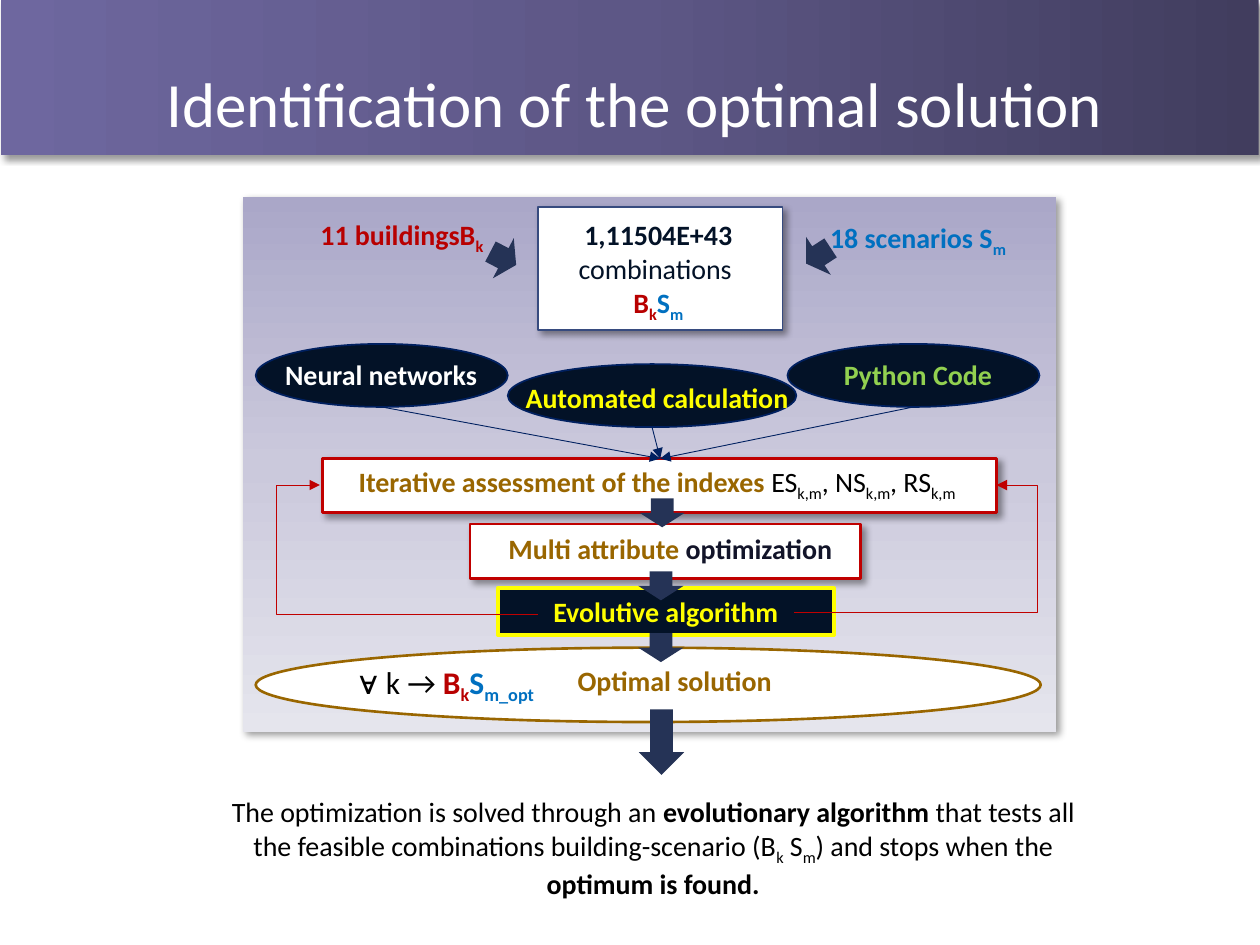
from typing import NamedTuple, Optional

from lxml import etree
from pptx import Presentation
from pptx import util as u
from pptx.dml.color import RGBColor
from pptx.enum import shapes, text
from pptx.oxml.ns import qn

WHITE = RGBColor(0xFF, 0xFF, 0xFF)
BLACK = RGBColor(0x00, 0x00, 0x00)
NIGHT = RGBColor(0x03, 0x12, 0x27)
INK = RGBColor(0x12, 0x14, 0x29)
ARROW = RGBColor(0x25, 0x33, 0x56)
NAVY = RGBColor(0x00, 0x20, 0x60)
STEEL = RGBColor(0x37, 0x4B, 0x7F)
BLUE = RGBColor(0x00, 0x70, 0xC0)
RED = RGBColor(0xB8, 0x00, 0x00)
CRIMSON = RGBColor(0xC0, 0x00, 0x00)
OCHRE = RGBColor(0x99, 0x66, 0x00)
YELLOW = RGBColor(0xFF, 0xFF, 0x00)
GREEN = RGBColor(0x92, 0xD0, 0x50)
BAND = [RGBColor(0x41, 0x3D, 0x5E), RGBColor(0x5D, 0x57, 0x86), RGBColor(0x6E, 0x67, 0x9F)]
PANEL = [RGBColor(0xAA, 0xA7, 0xC8), RGBColor(0xCB, 0xC9, 0xDC), RGBColor(0xE5, 0xE5, 0xED)]

COLUMNS, ROWS = 100, 75
Kind = shapes.MSO_SHAPE


class Span(NamedTuple):
    words: str
    color: RGBColor = BLACK
    bold: bool = False
    sub: bool = False
    font: Optional[str] = None


def child(parent, tag, **attributes):
    node = etree.SubElement(parent, qn(tag))
    for name, value in attributes.items():
        node.set(name, str(value))
    return node


def add_shadow(properties):
    effects = etree.Element(qn("a:effectLst"))
    shadow = child(effects, "a:outerShdw", blurRad=u.Pt(4), dist=u.Pt(3),
                   dir=45 * 60000, algn="tl", rotWithShape=0)
    child(child(shadow, "a:srgbClr", val=BLACK), "a:alpha", val=40000)
    before = properties.find(qn("a:latin"))
    if before is None:
        properties.append(effects)
    else:
        before.addprevious(effects)


class Diagram:
    """Draws on one slide; places are (column, row, columns, rows) of the grid."""

    font = "Calibri"
    size = 16

    def __init__(self, deck):
        self.column = deck.slide_width / COLUMNS
        self.row = deck.slide_height / ROWS
        self.page = deck.slides.add_slide(deck.slide_layouts[5])

    def emu(self, place):
        steps = (self.column, self.row) * (len(place) // 2)
        return [round(value * step) for value, step in zip(place, steps)]

    def add_spans(self, para, spans, size=None):
        for span in spans:
            run = para.add_run()
            run.text = span.words
            run.font.name = span.font or self.font
            run.font.size = u.Pt(size or self.size)
            run.font.bold = span.bold
            run.font.color.rgb = span.color
            if span.sub:
                run.font._element.set("baseline", "-25000")

    def title(self, place, words):
        box = self.page.shapes.title
        box.left, box.top, box.width, box.height = self.emu(place)
        frame = box.text_frame
        frame.auto_size = text.MSO_AUTO_SIZE.NONE
        frame.vertical_anchor = text.MSO_ANCHOR.BOTTOM
        para = frame.paragraphs[0]
        para.alignment = text.PP_ALIGN.LEFT
        para.line_spacing = 0.9
        self.add_spans(para, [Span(words, WHITE)], 36)
        add_shadow(para.runs[0].font._element)

    def shape(self, kind, place, fill=WHITE, line=None, weight=1, shadow=False, turn=0):
        shape = self.page.shapes.add_shape(kind, *self.emu(place))
        shape.rotation = turn
        shape.fill.solid()
        shape.fill.fore_color.rgb = fill
        if line is None:
            shape.line.fill.background()
        else:
            shape.line.color.rgb = line
            shape.line.width = u.Pt(weight)
        if shadow:
            add_shadow(shape._element.spPr)
        else:
            shape.shadow.inherit = False
        return shape

    def gradient(self, place, colors, angle):
        """Adds a shadowed rectangle shaded through evenly spaced colours."""
        shape = self.shape(Kind.RECTANGLE, place, shadow=True)
        solid = shape._element.spPr.find(qn("a:solidFill"))
        grad = etree.Element(qn("a:gradFill"), rotWithShape="1")
        stops = child(grad, "a:gsLst")
        for index, color in enumerate(colors):
            stop = child(stops, "a:gs", pos=index * 100000 // (len(colors) - 1))
            child(stop, "a:srgbClr", val=color)
        child(grad, "a:lin", ang=angle * 60000, scaled=0)
        solid.getparent().replace(solid, grad)
        return shape

    def send_to_back(self, shape):
        self.page.shapes._spTree.insert(2, shape._element)

    def label(self, place, *paragraphs, size=None, wrap=True):
        box = self.page.shapes.add_textbox(*self.emu(place))
        self.fill_text(box.text_frame, paragraphs, size, wrap)

    def fill_text(self, frame, paragraphs, size=None, wrap=True):
        frame.word_wrap = wrap
        for index, spans in enumerate(paragraphs):
            para = frame.add_paragraph() if index else frame.paragraphs[0]
            para.alignment = text.PP_ALIGN.CENTER
            self.add_spans(para, spans, size)

    def arrow(self, place, turn=90):
        self.shape(Kind.RIGHT_ARROW, place, ARROW, turn=turn)

    def connector(self, start, end, color, bend=None):
        """Adds a thin arrow; bend is the elbow's share of the horizontal run."""
        kind = shapes.MSO_CONNECTOR.ELBOW if bend else shapes.MSO_CONNECTOR.STRAIGHT
        line = self.page.shapes.add_connector(kind, *self.emu(start + end))
        line.line.color.rgb = color
        line.line.width = u.Pt(0.5)
        properties = line._element.spPr
        child(properties.find(qn("a:ln")), "a:tailEnd", type="triangle")
        child(properties, "a:effectLst")
        if bend:
            guides = properties.find(qn("a:prstGeom")).find(qn("a:avLst"))
            child(guides, "a:gd", name="adj1", fmla=f"val {round(bend * 100000)}")


def bold(words, color):
    return Span(words, color, True)


def indexed(letter, index, color=BLACK, heavy=False):
    return [Span(letter, color, heavy), Span(index, color, heavy, True)]


def main():
    deck = Presentation()
    deck.slide_width, deck.slide_height = u.Inches(10), u.Inches(7.5)
    draw = Diagram(deck)

    draw.send_to_back(draw.gradient((0.1, 0, 99.8, 12.3), BAND, 180))
    draw.title((12.2, 4.3, 83.5, 7.4), "Identification of the optimal solution")
    draw.label((16.3, 62.6, 71.1, 9.1), [
        Span("The optimization is solved through an "),
        bold("evolutionary algorithm", BLACK),
        Span(" that tests all the feasible combinations building-scenario ("),
        *indexed("B", "k"), *indexed(" S", "m"),
        Span(") and stops when the "), bold("optimum is found.", BLACK)])

    draw.gradient((19.3, 15.6, 64.5, 42.5), PANEL, 90)
    draw.shape(Kind.RECTANGLE, (42.7, 16.4, 19.4, 9.8), line=STEEL, shadow=True)
    for place in ((25.6, 36.4, 53.5, 4.3), (37.3, 41.6, 31, 4.3)):
        draw.shape(Kind.RECTANGLE, place, line=CRIMSON, weight=1.5, shadow=True)
    draw.shape(Kind.OVAL, (20.3, 51.4, 62.3, 5.9), line=OCHRE, weight=1.5)

    draw.label((37.1, 41.7, 32.2, 3.7),
               [bold("Multi attribute ", OCHRE), bold("optimization", INK)])
    draw.arrow((51.4, 38.9, 2.3, 3.6))
    draw.label((41.3, 16.8, 21.9, 11.8),
               [bold("1,11504E+43 ", NIGHT), Span("combinations ", NIGHT)],
               indexed("B", "k", RED, True) + indexed("S", "m", BLUE, True))
    evolutive = draw.shape(Kind.RECTANGLE, (39.5, 46.7, 26.7, 3.7), NIGHT, YELLOW, 2.25)
    draw.fill_text(evolutive.text_frame, [[bold("Evolutive algorithm", YELLOW)]])
    draw.arrow((51.3, 44.7, 2.3, 3.6))

    draw.label((22.6, 16.8, 18.6, 3.7), indexed("11 buildingsB", "k", RED, True))
    draw.label((63.9, 17, 17.9, 3.7), indexed("18 scenarios S", "m", BLUE, True))
    draw.arrow((38.8, 18.7, 2.3, 3.6), 27.5)
    draw.arrow((63.8, 18.5, 2.3, 3.6), 146.9)

    methods = [
        ("Neural networks", WHITE, (20.3, 27.3, 20, 5), (16.9, 27.9)),
        ("Automated calculation", YELLOW, (40.3, 28.9, 22.9, 5), (38.8, 29.7)),
        ("Python Code", GREEN, (62.5, 27.3, 20, 5), (59.5, 27.9)),
    ]
    for words, color, place, corner in methods:
        draw.shape(Kind.OVAL, place, NIGHT, NAVY)
        draw.label(corner + (26.7, 3.7), [bold(words, color)])

    draw.label((21, 36.4, 62.3, 3.7), [
        bold("Iterative assessment of the indexes ", OCHRE),
        *indexed("ES", "k,m"), *indexed(", NS", "k,m"), *indexed(", RS", "k,m")])
    for _, _, (left, top, width, height), _ in methods:
        draw.connector((left + width / 2, top + height), (52.4, 36.4), NAVY)
    draw.connector((63, 48.6), (79.1, 38.5), CRIMSON, bend=1.2)
    draw.connector((42.7, 48.8), (25.4, 38.5), CRIMSON, bend=1.2)

    draw.label((22.4, 52.2, 62.3, 3.7), [bold("Optimal solution", OCHRE)])
    draw.arrow((51.3, 49.6, 2.3, 3.6))
    draw.arrow((49.9, 57.1, 5.2, 3.6))
    draw.label((27.2, 52.1, 16.5, 4),
               [Span("∀ ", font="Times New Roman"), Span("k → "),
                *indexed("B", "k", RED, True), *indexed("S", "m_opt", BLUE, True)],
               size=18, wrap=False)

    deck.save("out.pptx")


if __name__ == "__main__":
    main()
